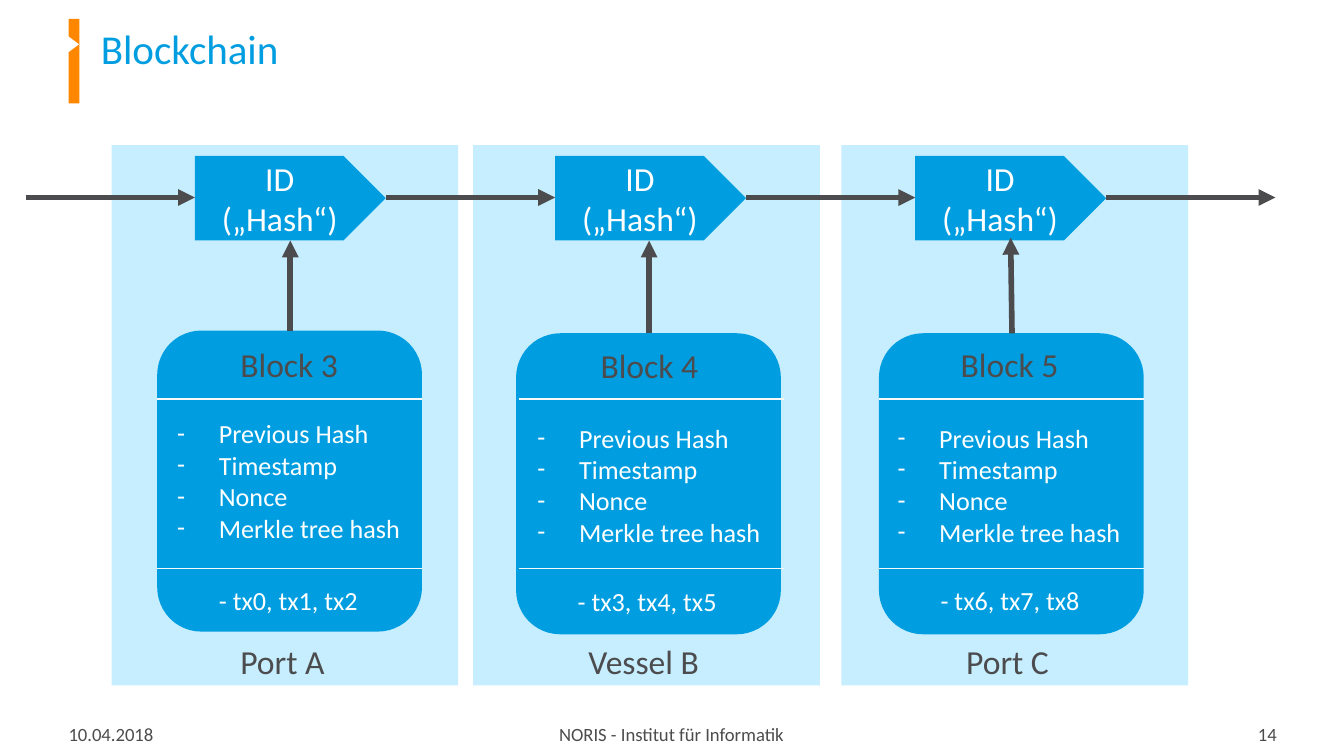
"""Builds the Blockchain slide: three linked blocks, each with its hash and owner."""
from lxml import etree
from pptx import Presentation
from pptx.dml.color import RGBColor
from pptx.enum.shapes import MSO_CONNECTOR, MSO_SHAPE
from pptx.enum.text import MSO_ANCHOR, PP_ALIGN
from pptx.oxml.ns import qn
from pptx.util import Inches, Pt

STRAIGHT = MSO_CONNECTOR.STRAIGHT
RECTANGLE = MSO_SHAPE.RECTANGLE
PENTAGON = MSO_SHAPE.PENTAGON
BLOCK = MSO_SHAPE.FLOWCHART_ALTERNATE_PROCESS
MIDDLE, TOP = MSO_ANCHOR.MIDDLE, MSO_ANCHOR.TOP
LEFT, CENTER, RIGHT = PP_ALIGN.LEFT, PP_ALIGN.CENTER, PP_ALIGN.RIGHT
FONT = "Calibri"
BLUE, PALE, ORANGE = "009EE0", "C6EEFF", "FF8700"
GREY, WHITE, RULE = "4C4C4E", "FFFFFF", "F9F9F9"
HASH_Y, PITCH = 1.47, 2.68

color = RGBColor.from_string
prs = Presentation()
prs.slide_width, prs.slide_height = Inches(10), Inches(10) * 9 // 16
slide = prs.slides.add_slide(prs.slide_layouts[5])
shapes = slide.shapes


def write(shape, text, size, ink, align=LEFT, anchor=TOP, wrap=False, bullet=None):
    frame = shape.text_frame
    frame.text = text
    frame.word_wrap = wrap
    frame.vertical_anchor = anchor
    for paragraph in frame.paragraphs:
        paragraph.alignment = align
        if bullet:
            properties = paragraph._p.get_or_add_pPr()
            properties.set("marL", str(Inches(0.31)))
            properties.set("indent", str(-Inches(0.31)))
            etree.SubElement(properties, qn("a:buFont")).set("typeface", FONT)
            etree.SubElement(properties, qn("a:buChar")).set("char", bullet)
            etree.SubElement(paragraph._p, qn("a:endParaRPr")).set("sz", str(size * 100))
        for run in paragraph.runs:
            run.font.name, run.font.size = FONT, Pt(size)
            run.font.color.rgb = color(ink)
    return frame


def draw_line(x1, y1, x2, y2, ink, width, arrow=False):
    line = shapes.add_connector(STRAIGHT, Inches(x1), Inches(y1), Inches(x2), Inches(y2))
    line.line.color.rgb = color(ink)
    line.line.width = Pt(width)
    if arrow:
        etree.SubElement(line.line._get_or_add_ln(), qn("a:tailEnd")).set("type", "triangle")
    etree.SubElement(line._element.spPr, qn("a:effectLst"))


accent_outlines = [
    [(0.59, 0.33), (0.59, 0.77), (0.51, 0.77), (0.51, 0.39)],
    [(0.51, 0.14), (0.59, 0.14), (0.59, 0.33), (0.51, 0.27)],
]
builder = shapes.build_freeform(Inches(0.59), Inches(0.33))
for outline in accent_outlines:
    points = [(Inches(x), Inches(y)) for x, y in outline]
    builder.move_to(*points[0])
    builder.add_line_segments(points[1:], close=True)
accent = builder.convert_to_shape()
accent.shadow.inherit = False
accent.fill.solid()
accent.fill.fore_color.rgb = color(ORANGE)
accent.line.fill.background()

title = shapes.title
title.left, title.top, title.width, title.height = (Inches(v) for v in (0.67, 0.14, 7.56, 0.39))
title_frame = write(title, "Blockchain", 22, BLUE, anchor=MIDDLE, wrap=True)
title_frame.margin_left = title_frame.margin_right = Inches(0.08)
title_frame.margin_top, title_frame.margin_bottom = Inches(0.04), 0

footers = [
    (0.51, 0.79, "10.04.2018", LEFT, 0, 0.1),
    (1.39, 7.21, "NORIS - Institut für Informatik", CENTER, 0.1, 0.1),
    (8.71, 0.79, "14", RIGHT, 0.1, 0),
]
for left, width, text, align, inset_left, inset_right in footers:
    footer = shapes.add_textbox(Inches(left), Inches(5.32), Inches(width), Inches(0.29))
    footer_frame = write(footer, text, 10, GREY, align, MIDDLE, wrap=align == CENTER)
    footer_frame.margin_left, footer_frame.margin_right = Inches(inset_left), Inches(inset_right)

header_fields = "Previous Hash\nTimestamp\nNonce\nMerkle tree hash"
columns = [
    dict(panel=0.83, block=1.17, block_top=2.46, tip=(2.16, 1.79), rule=1.17,
         name="Block 3", name_top=2.51, fields_top=3.06, tx="- tx0, tx1, tx2", tx_at=(1.53, 4.3),
         owner="Port A", owner_left=1.69, owner_width=0.84),
    dict(panel=3.52, block=3.84, block_top=2.48, tip=(4.83, 1.79), rule=3.86,
         name="Block 4", name_top=2.52, fields_top=3.09, tx="- tx3, tx4, tx5", tx_at=(4.2, 4.31),
         owner="Vessel B", owner_left=4.28, owner_width=1.03),
    dict(panel=6.26, block=6.54, block_top=2.48, tip=(7.52, 1.77), rule=6.54,
         name="Block 5", name_top=2.51, fields_top=3.09, tx="- tx6, tx7, tx8", tx_at=(6.9, 4.3),
         owner="Port C", owner_left=7.09, owner_width=0.82),
]

solids = [(RECTANGLE, c["panel"], 1.08, 2.58, 4.02, PALE, "") for c in columns]
for i, c in enumerate(columns):
    solids.append((PENTAGON, 1.45 + PITCH * i, 1.16, 1.42, 0.63, BLUE, "ID („Hash“)"))
    solids.append((BLOCK, c["block"], c["block_top"], 1.97, 2.24, BLUE, ""))
for preset, left, top, width, height, fill, text in solids:
    solid = shapes.add_shape(preset, Inches(left), Inches(top), Inches(width), Inches(height))
    solid.shadow.inherit = False
    solid.fill.solid()
    solid.fill.fore_color.rgb = color(fill)
    solid.line.fill.background()
    if text:
        write(solid, text, 18, WHITE, CENTER, MIDDLE, wrap=True)

for i in range(len(columns) + 1):
    draw_line(0.19 + PITCH * i, HASH_Y, 1.45 + PITCH * i, HASH_Y, GREY, 3, arrow=True)

for i, c in enumerate(columns):
    draw_line(c["block"] + 0.99, c["block_top"], *c["tip"], GREY, 3, arrow=True)
    for y in (2.97, 4.23):
        draw_line(c["rule"], y, c["rule"] + 1.97, y, RULE, 0.75)
    offset = PITCH * i
    labels = [
        (1.69 + offset, c["name_top"], 0.94, 0.4, c["name"], 18, GREY, None),
        (1.22 + offset, c["fields_top"], 1.88, 1.04, header_fields, 14, WHITE, "-"),
        (*c["tx_at"], 1.25, 0.34, c["tx"], 14, WHITE, None),
        (c["owner_left"], 4.72, c["owner_width"], 0.4, c["owner"], 18, GREY, None),
    ]
    for left, top, width, height, text, size, ink, bullet in labels:
        label = shapes.add_textbox(Inches(left), Inches(top), Inches(width), Inches(height))
        write(label, text, size, ink, bullet=bullet)

prs.save("out.pptx")
